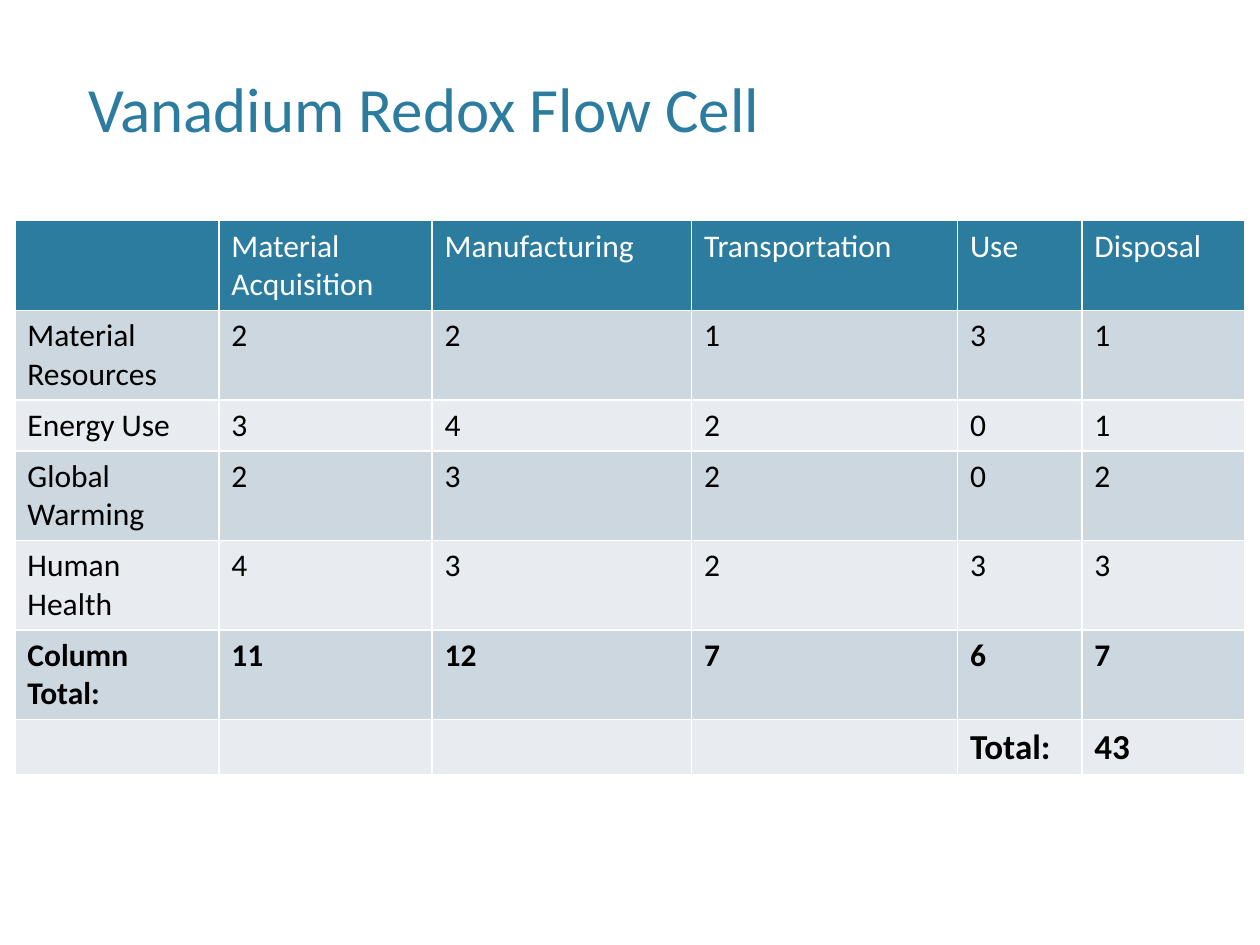
import dataclasses

import pptx
import pptx.dml.color
import pptx.enum.text
import pptx.util
from pptx.util import Cm


@dataclasses.dataclass(frozen=True)
class Theme:
    font: str = "Calibri"
    accent: str = "2C7C9F"
    header_text: str = "FFFFFF"
    body_text: str = "000000"
    bands: tuple = ("CDD7DF", "E8ECF0")
    title_size: int = 36
    table_size: int = 18
    total_size: int = 20


THEME = Theme()
TITLE = "Vanadium Redox Flow Cell"
STAGES = ["Material Acquisition", "Manufacturing", "Transportation", "Use", "Disposal"]
IMPACTS = {
    "Material Resources": [2, 2, 1, 3, 1],
    "Energy Use": [3, 4, 2, 0, 1],
    "Global Warming": [2, 3, 2, 0, 2],
    "Human Health": [4, 3, 2, 3, 3],
}
COLUMN_WIDTHS = [4.11, 4.3, 5.23, 5.36, 2.51, 3.28]
ROW_HEIGHT = 1.03


def rgb(value):
    return pptx.dml.color.RGBColor.from_string(value)


def format_text(text_frame, size, color, bold=False):
    for paragraph in text_frame.paragraphs:
        for run in paragraph.runs:
            run.font.name = THEME.font
            run.font.size = pptx.util.Pt(size)
            run.font.bold = bold
            run.font.color.rgb = rgb(color)


def place_title(slide, left, top, width, height):
    title = slide.shapes.title
    title.left, title.top, title.width, title.height = map(Cm, (left, top, width, height))
    text_frame = title.text_frame
    text_frame.text = TITLE
    text_frame.auto_size = pptx.enum.text.MSO_AUTO_SIZE.NONE
    text_frame.vertical_anchor = pptx.enum.text.MSO_ANCHOR.MIDDLE
    text_frame.paragraphs[0].alignment = pptx.enum.text.PP_ALIGN.LEFT
    format_text(text_frame, THEME.title_size, THEME.accent)


def impact_rows():
    totals = [sum(scores) for scores in zip(*IMPACTS.values())]
    return [
        ["", *STAGES],
        *([impact, *scores] for impact, scores in IMPACTS.items()),
        ["Column Total:", *totals],
        ["", "", "", "", "Total:", sum(totals)],
    ]


def place_impact_table(slide, left, top):
    rows = impact_rows()
    frame = slide.shapes.add_table(
        len(rows), len(COLUMN_WIDTHS), Cm(left), Cm(top),
        Cm(sum(COLUMN_WIDTHS)), Cm(ROW_HEIGHT * len(rows)))
    table = frame.table
    for column, width in zip(table.columns, COLUMN_WIDTHS):
        column.width = Cm(width)
    for row_index, values in enumerate(rows):
        table.rows[row_index].height = Cm(ROW_HEIGHT)
        is_header = row_index == 0
        is_grand_total = row_index == len(rows) - 1
        fill = THEME.accent if is_header else THEME.bands[(row_index - 1) % 2]
        color = THEME.header_text if is_header else THEME.body_text
        size = THEME.total_size if is_grand_total else THEME.table_size
        for column_index, value in enumerate(values):
            cell = table.cell(row_index, column_index)
            cell.fill.solid()
            cell.fill.fore_color.rgb = rgb(fill)
            cell.text_frame.text = str(value)
            format_text(cell.text_frame, size, color, bold=row_index > len(IMPACTS))


def main():
    presentation = pptx.Presentation()
    presentation.slide_width = Cm(25.4)
    presentation.slide_height = Cm(19.05)
    slide = presentation.slides.add_slide(presentation.slide_layouts.get_by_name("Title Only"))
    place_title(slide, 1.52, 0.3, 22.35, 3.71)
    place_impact_table(slide, 0.3, 4.45)
    presentation.save("out.pptx")


if __name__ == "__main__":
    main()
